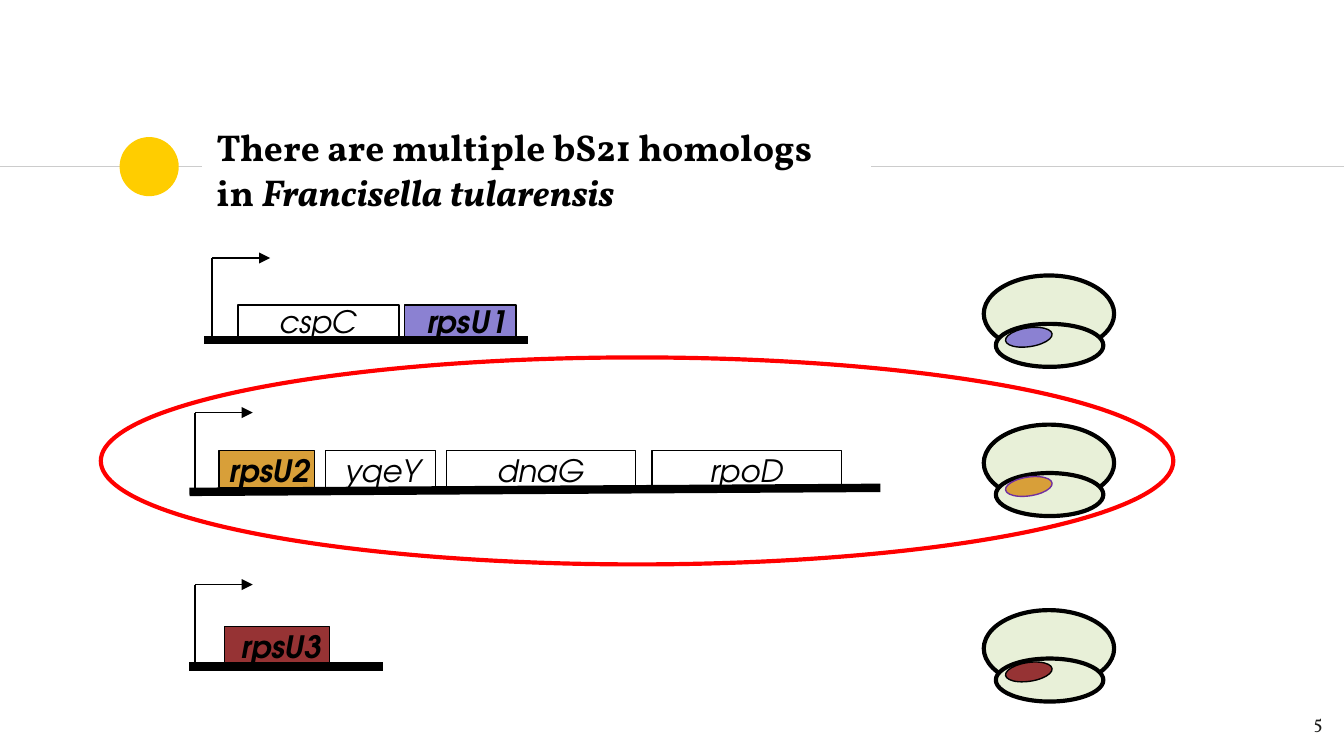
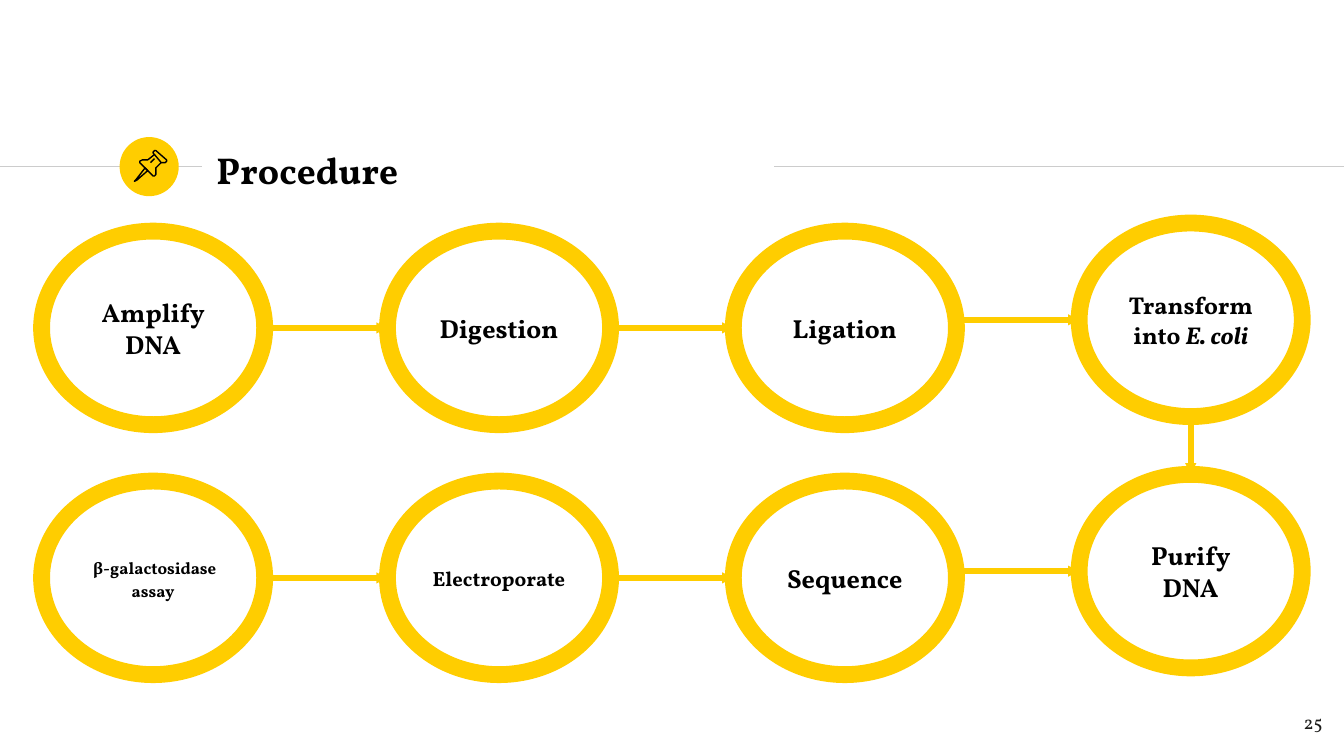
import dataclasses

import pptx
import pptx.dml.color
import pptx.enum.shapes
import pptx.enum.text
import pptx.oxml
import pptx.oxml.ns
import pptx.util

Inches = pptx.util.Inches
PRESET = pptx.enum.shapes.MSO_SHAPE
ALIGN = pptx.enum.text.PP_ALIGN
ANCHOR = pptx.enum.text.MSO_ANCHOR
AUTO_SIZE = pptx.enum.text.MSO_AUTO_SIZE


@dataclasses.dataclass(frozen=True)
class Theme:
    serif: str = "Vollkorn"
    sans: str = "TeX Gyre Adventor"
    ink: str = "000000"
    page_ink: str = "1D1D1B"
    paper: str = "FFFFFF"
    rule: str = "CCCCCC"
    accent: str = "FFCD00"
    highlight: str = "FF0000"
    ribosome: str = "E8F0D8"
    purple: str = "8B81D2"
    amber: str = "D89F39"
    maroon: str = "963334"
    violet: str = "7030A0"
    title_size: float = 20
    gene_size: float = 16.5
    step_size: float = 14
    page_size: float = 10


THEME = Theme()


@dataclasses.dataclass(frozen=True)
class Gene:
    name: str
    left: float
    width: float
    label_left: float
    label_width: float
    fill: str = None


@dataclasses.dataclass(frozen=True)
class Operon:
    genes: tuple
    top: float
    height: float
    label_top: float
    strand: tuple
    promoter: tuple
    ribosome_top: float
    homolog: str
    homolog_outline: str = THEME.ink


@dataclasses.dataclass(frozen=True)
class Step:
    runs: object
    size: float = THEME.step_size
    inset: float = 0.1
    spacing: float = None


OPERONS = (
    Operon(
        (Gene("cspC", 1.77, 1.2, 1.98, 0.79),
         Gene("rpsU1", 3.01, 0.83, 3.08, 0.81, THEME.purple)),
        2.27, 0.26, 2.2, (1.52, 2.53, 3.93, 2.53), (1.58, 1.92), 2.05, THEME.purple,
    ),
    Operon(
        (Gene("rpsU2", 1.63, 0.71, 1.61, 0.81, THEME.amber),
         Gene("yqeY", 2.42, 0.82, 2.47, 0.77),
         Gene("dnaG", 3.32, 1.41, 3.6, 0.86),
         Gene("rpoD", 4.85, 1.41, 5.19, 0.75)),
        3.35, 0.28, 3.31, (1.41, 3.66, 6.55, 3.63), (1.45, 3.07), 3.16, THEME.amber,
        THEME.violet,
    ),
    Operon(
        (Gene("rpsU3", 1.67, 0.78, 1.7, 0.81, THEME.maroon),),
        4.66, 0.29, 4.62, (1.41, 4.96, 2.85, 4.96), (1.45, 4.35), 4.54, THEME.maroon,
    ),
)

STEP_ROWS = (
    (1.72, 1.66, (Step("Amplify DNA"), Step("Digestion"), Step("Ligation"),
                  Step((("Transform into ", False), ("E. coli", True)), 13))),
    (3.58, 3.53, (Step(" β-galactosidase assay", 9, 0, 1.15),
                  Step("Electroporate", 11, 0.05),
                  Step("Sequence"), Step("Purify DNA"))),
)
STEP_LEFT, STEP_LAST_LEFT = 0.31, 8.03
STEP_WIDTH, STEP_HEIGHT = 1.66, 1.44

PIN_OUTLINES = (
    (((108, 125), (101, 134), (100, 135), (102, 134), (110, 127)), True),
    (((115, 115), (120, 121), (122, 121), (123, 121), (124, 120), (124, 119),
      (116, 112), (115, 112), (114, 113), (114, 114)), True),
    (((115, 115), (110, 119), (108, 119), (106, 119), (104, 120), (104, 121),
      (114, 131), (115, 131), (116, 130), (116, 128), (116, 125), (120, 121)), False),
    (((112, 121), (115, 118)), False),
)


def rgb(code):
    return pptx.dml.color.RGBColor.from_string(code)


def write_text(holder, runs, *, size, font=THEME.serif, color=THEME.ink, bold=False,
               italic=False, align=ALIGN.LEFT, anchor=ANCHOR.TOP, insets=(0.1, 0.1),
               wrap=True, grow=False, spacing=None):
    frame = holder.text_frame
    frame.word_wrap = wrap
    frame.auto_size = AUTO_SIZE.SHAPE_TO_FIT_TEXT if grow else AUTO_SIZE.NONE
    frame.vertical_anchor = anchor
    frame.margin_left = frame.margin_right = Inches(insets[0])
    frame.margin_top = frame.margin_bottom = Inches(insets[1])
    paragraph = frame.paragraphs[0]
    paragraph.alignment = align
    if spacing:
        paragraph.line_spacing = spacing
    for words, slanted in ((runs, italic),) if isinstance(runs, str) else runs:
        run = paragraph.add_run()
        run.text = words
        run.font.name = font
        run.font.size = pptx.util.Pt(size)
        run.font.bold = bold
        run.font.italic = slanted
        run.font.color.rgb = rgb(color)


def paint(outline, fill=None, line=None, weight=0.75):
    outline.shadow.inherit = False
    if fill:
        outline.fill.solid()
        outline.fill.fore_color.rgb = rgb(fill)
    else:
        outline.fill.background()
    if line:
        outline.line.color.rgb = rgb(line)
        outline.line.width = pptx.util.Pt(weight)
    else:
        outline.line.fill.background()


def draw_shape(canvas, preset, box, **style):
    drawn = canvas.add_shape(preset, *map(Inches, box))
    paint(drawn, **style)
    return drawn


def draw_line(canvas, ends, color=THEME.ink, weight=0.75, arrow=None):
    stroke = canvas.add_connector(pptx.enum.shapes.MSO_CONNECTOR.STRAIGHT, *map(Inches, ends))
    stroke.line.color.rgb = rgb(color)
    stroke.line.width = pptx.util.Pt(weight)
    namespace = pptx.oxml.ns.nsdecls("a")
    properties = stroke.element.spPr
    if arrow:
        tail = pptx.oxml.parse_xml(
            f'<a:tailEnd {namespace} type="triangle" w="{arrow}" len="{arrow}"/>')
        properties.find(pptx.oxml.ns.qn("a:ln")).append(tail)
    properties.append(pptx.oxml.parse_xml(f"<a:effectLst {namespace}/>"))


def add_text_box(canvas, box, runs, **style):
    write_text(canvas.add_textbox(*map(Inches, box)), runs, **style)


def start_slide(deck, title_runs, title_width, page, rule_gap=None):
    slide = deck.slides.add_slide(deck.slide_layouts[5])
    canvas = slide.shapes
    for ends in ((0, 1.24, 1.5, 1.24), (5.76, 1.24, 10, 1.24)):
        draw_line(canvas, ends, THEME.rule)
    draw_shape(canvas, PRESET.OVAL, (0.89, 1.02, 0.44, 0.44), fill=THEME.accent)
    if rule_gap:
        draw_shape(canvas, PRESET.RECTANGLE, rule_gap,
                   fill=THEME.paper, line=THEME.paper, weight=2)
    title = canvas.title
    title.left, title.top = Inches(1.51), Inches(1.02)
    title.width, title.height = Inches(title_width), Inches(0.48)
    write_text(title, title_runs, size=THEME.title_size, bold=True, anchor=ANCHOR.MIDDLE)
    title.element.getparent().append(title.element)
    add_text_box(canvas, (9.34, 5.19, 0.6, 0.43), page, size=THEME.page_size,
                 color=THEME.page_ink, align=ALIGN.RIGHT)
    return canvas


def draw_operon(canvas, operon):
    parts = canvas.add_group_shape().shapes
    for gene in operon.genes:
        draw_shape(parts, PRESET.RECTANGLE, (gene.left, operon.top, gene.width, operon.height),
                   fill=gene.fill, line=THEME.ink)
        add_text_box(parts, (gene.label_left, operon.label_top, gene.label_width, 0.38),
                     gene.name, size=THEME.gene_size, font=THEME.sans,
                     bold=gene.fill is not None, italic=True, insets=(0.1, 0.05),
                     wrap=False, grow=True)
    draw_line(parts, operon.strand, weight=4.5)


def draw_promoter(canvas, left, top):
    parts = canvas.add_group_shape().shapes
    draw_line(parts, (left, top, left, top + 0.62), weight=1)
    draw_line(parts, (left, top, left + 0.43, top), arrow="med")


def draw_ribosome(canvas, top, homolog, homolog_outline):
    parts = canvas.add_group_shape().shapes
    for subunit in ((7.32, top, 0.97, 0.57), (7.41, top + 0.36, 0.8, 0.32)):
        draw_shape(parts, PRESET.OVAL, subunit, fill=THEME.ribosome,
                   line=THEME.ink, weight=2.25)
    protein = draw_shape(parts, PRESET.OVAL, (7.48, top + 0.39, 0.35, 0.14),
                         fill=homolog, line=homolog_outline)
    protein.rotation = 351.6


def draw_pin(canvas):
    parts = canvas.add_group_shape().shapes
    for points, closed in PIN_OUTLINES:
        builder = parts.build_freeform(*points[0], scale=Inches(0.01))
        builder.add_line_segments(points[1:], close=closed)
        paint(builder.convert_to_shape(), line=THEME.ink)


def draw_step(canvas, step, left, top):
    ring = draw_shape(canvas, PRESET.OVAL, (left, top, STEP_WIDTH, STEP_HEIGHT),
                      line=THEME.accent, weight=9)
    write_text(ring, step.runs, size=step.size, bold=True, align=ALIGN.CENTER,
               anchor=ANCHOR.MIDDLE, insets=(step.inset, step.inset), spacing=step.spacing)


def draw_step_arrow(canvas, ends):
    draw_line(canvas, ends, THEME.accent, 3, arrow="sm")


def build_homologs(deck):
    title = (("There are multiple bS21 homologs in ", False), ("Francisella tularensis", True))
    canvas = start_slide(deck, title, 4.71, "5", rule_gap=(5.62, 0.91, 0.85, 0.67))
    for operon in OPERONS:
        draw_operon(canvas, operon)
        draw_promoter(canvas, *operon.promoter)
        draw_ribosome(canvas, operon.ribosome_top, operon.homolog, operon.homolog_outline)
    draw_shape(canvas, PRESET.OVAL, (0.75, 2.66, 7.98, 1.54),
               line=THEME.highlight, weight=2.25)


def build_procedure(deck):
    canvas = start_slide(deck, "Procedure", 4.24, "25")
    draw_pin(canvas)
    for row_top, last_top, steps in STEP_ROWS:
        last = len(steps) - 1
        pitch = (STEP_LAST_LEFT - STEP_LEFT) / last
        for column, step in enumerate(steps):
            left = STEP_LEFT + column * pitch
            top = last_top if column == last else row_top
            draw_step(canvas, step, left, top)
            if column:
                middle = top + STEP_HEIGHT / 2
                draw_step_arrow(canvas, (left - pitch + STEP_WIDTH, middle, left, middle))
    turn = STEP_LAST_LEFT + STEP_WIDTH / 2
    upper, lower = (last_top for _, last_top, _ in STEP_ROWS)
    draw_step_arrow(canvas, (turn, upper + STEP_HEIGHT, turn, lower))


def main():
    deck = pptx.Presentation()
    deck.slide_width = Inches(10)
    deck.slide_height = deck.slide_width * 9 // 16
    build_homologs(deck)
    build_procedure(deck)
    deck.save("out.pptx")


if __name__ == "__main__":
    main()
